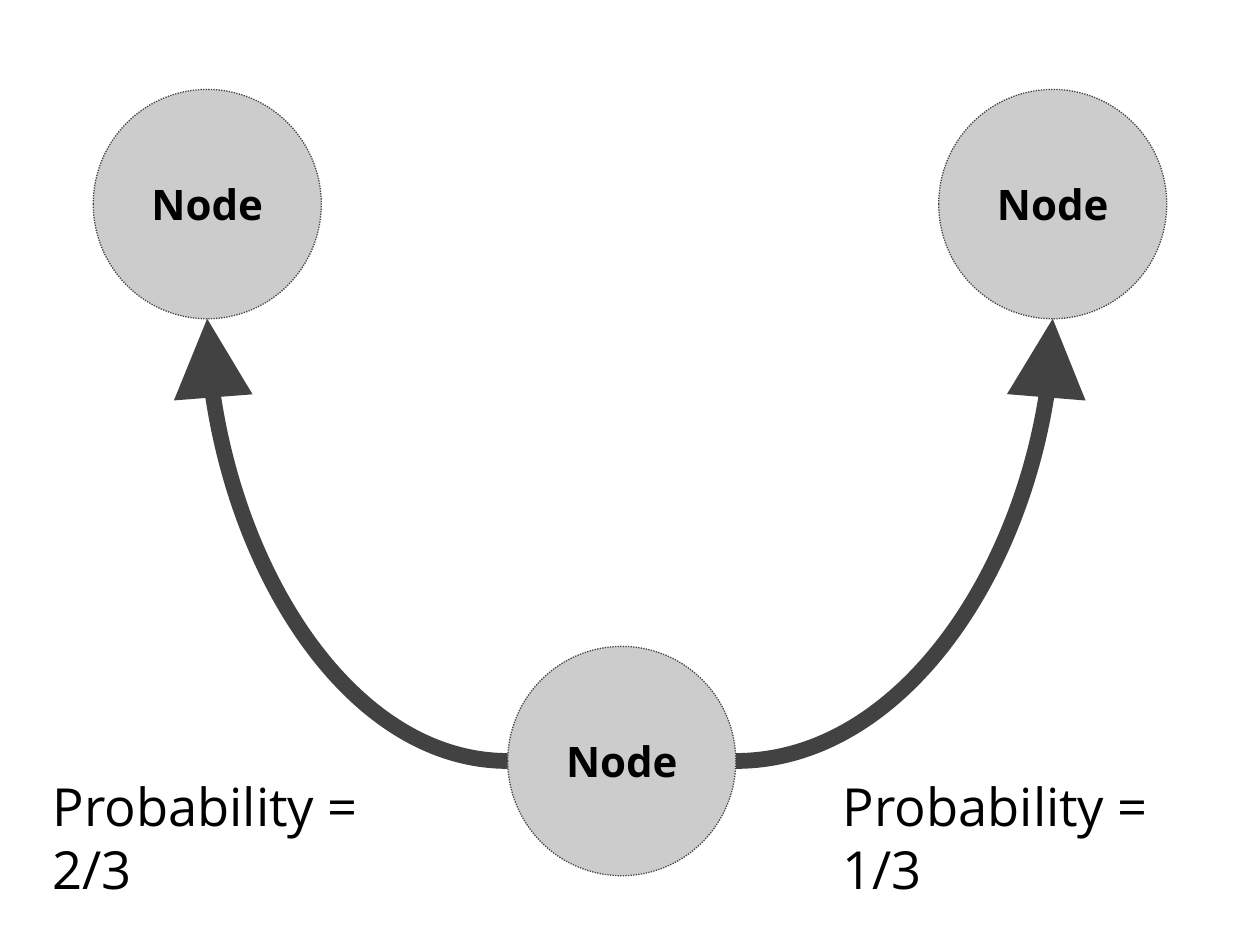
import pptx
import pptx.util
import pptx.dml.color
import pptx.enum.dml
import pptx.enum.shapes
import pptx.enum.text
import pptx.oxml.ns
from lxml import etree

Inches = pptx.util.Inches
Pt = pptx.util.Pt

COLORS = {"node": "CCCCCC", "line": "424242", "text": "000000"}
FONT = "Open Sans"
NODE_W, NODE_H = 1.81, 1.82
TOP_Y, ROOT_X, ROOT_Y = 0.71, 4.03, 5.13


def color(name):
    return pptx.dml.color.RGBColor.from_string(COLORS[name])


def set_text(sp, text, size, bold=False):
    tf = sp.text_frame
    tf.word_wrap = True
    tf.margin_left = tf.margin_right = Inches(0.1)
    tf.margin_top = tf.margin_bottom = Inches(0.1)
    tf.text = text
    p = tf.paragraphs[0]
    font = p.runs[0].font
    font.name, font.size, font.bold = FONT, Pt(size), bold
    font.color.rgb = color("text")
    return p


def add_node(s, x, y):
    sp = s.shapes.add_shape(pptx.enum.shapes.MSO_SHAPE.OVAL, Inches(x), Inches(y),
                            Inches(NODE_W), Inches(NODE_H))
    sp.shadow.inherit = False
    sp.fill.solid()
    sp.fill.fore_color.rgb = color("node")
    sp.line.color.rgb = color("line")
    sp.line.width = Pt(0.75)
    sp.line.dash_style = pptx.enum.dml.MSO_LINE.ROUND_DOT
    p = set_text(sp, "Node", 24, bold=True)
    p.alignment = pptx.enum.text.PP_ALIGN.CENTER
    sp.text_frame.vertical_anchor = pptx.enum.text.MSO_ANCHOR.MIDDLE


def add_curved_arrow(s, x1, y1, x2, y2):
    qn = pptx.oxml.ns.qn
    c = s.shapes.add_connector(pptx.enum.shapes.MSO_CONNECTOR.CURVE,
                               Inches(x1), Inches(y1), Inches(x2), Inches(y2))
    c.line.color.rgb = color("line")
    c.line.width = Pt(9)
    # Quarter curve, large arrowhead, no shadow
    sp_pr = c._element.spPr
    sp_pr.find(qn("a:prstGeom")).set("prst", "curvedConnector2")
    etree.SubElement(sp_pr.find(qn("a:ln")), qn("a:tailEnd"),
                     type="triangle", w="lg", len="lg")
    etree.SubElement(sp_pr, qn("a:effectLst"))


def add_label(s, x, width, text):
    sp = s.shapes.add_textbox(Inches(x), Inches(6.04), Inches(width), Inches(1.2))
    set_text(sp, text, 30)


def main():
    prs = pptx.Presentation()
    prs.slide_width, prs.slide_height = Inches(10), Inches(7.5)
    s = prs.slides.add_slide(prs.slide_layouts[6])

    # Root node, then each branch: node and the arrow leading to it
    add_node(s, ROOT_X, ROOT_Y)
    for x, start_x in ((0.74, ROOT_X), (7.45, ROOT_X + NODE_W)):
        add_node(s, x, TOP_Y)
        add_curved_arrow(s, start_x, ROOT_Y + NODE_H / 2,
                         x + NODE_W / 2, TOP_Y + NODE_H)

    # Branch probabilities
    add_label(s, 0.32, 3.04, "Probability = 2/3")
    add_label(s, 6.59, 3.34, "Probability = 1/3")

    prs.save("out.pptx")


if __name__ == "__main__":
    main()
